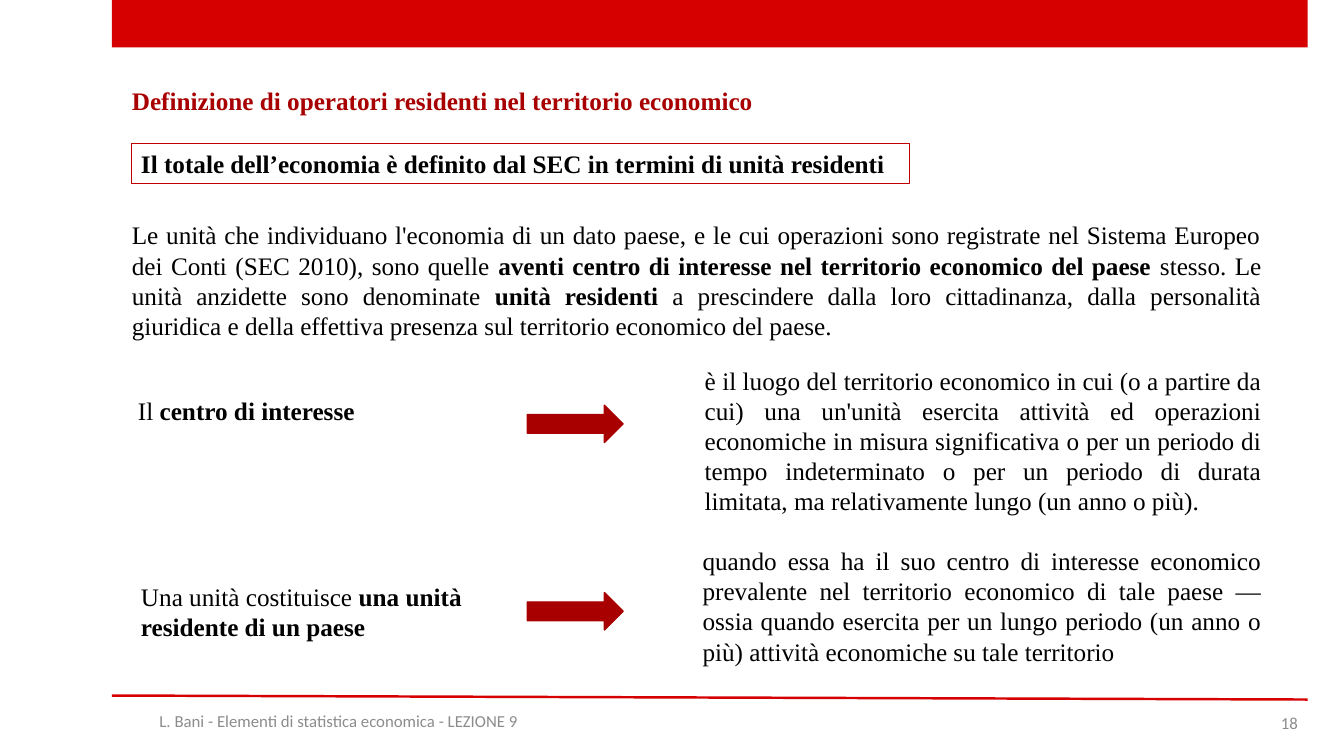
from dataclasses import dataclass

from pptx import Presentation
from pptx.dml.color import RGBColor
from pptx.enum.shapes import MSO_CONNECTOR, MSO_SHAPE
from pptx.enum.text import MSO_ANCHOR, PP_ALIGN
from pptx.util import Inches, Pt
from lxml import etree

RECT, ARROW = MSO_SHAPE.RECTANGLE, MSO_SHAPE.RIGHT_ARROW
LINE = MSO_CONNECTOR.STRAIGHT
LEFT, CENTER, RIGHT, JUSTIFY = (PP_ALIGN.LEFT, PP_ALIGN.CENTER,
                                PP_ALIGN.RIGHT, PP_ALIGN.JUSTIFY)
TOP, MIDDLE = MSO_ANCHOR.TOP, MSO_ANCHOR.MIDDLE
A_NS = "http://schemas.openxmlformats.org/drawingml/2006/main"


@dataclass(frozen=True)
class Theme:
    band: RGBColor = RGBColor(0xD6, 0x00, 0x00)
    accent: RGBColor = RGBColor(0xA8, 0x00, 0x00)
    frame: RGBColor = RGBColor(0xC0, 0x00, 0x00)
    ink: RGBColor = RGBColor(0x00, 0x00, 0x00)
    muted: RGBColor = RGBColor(0x8C, 0x8C, 0x8C)
    body_font: str = "Times New Roman"
    footer_font: str = "Calibri"
    body_size: int = 18
    footer_size: int = 12


THEME = Theme()


def write(tf, parts, align=LEFT, color=THEME.ink, font=THEME.body_font,
          size=THEME.body_size, anchor=TOP, wrap=True):
    """Fill a text frame with (text, bold) parts."""
    tf.word_wrap = wrap
    tf.vertical_anchor = anchor
    p = tf.paragraphs[0]
    p.alignment = align
    for text, bold in parts:
        r = p.add_run()
        r.text = text
        r.font.name, r.font.size, r.font.bold = font, Pt(size), bold
        r.font.color.rgb = color


def add_text(s, box, parts, **style):
    tb = s.shapes.add_textbox(*map(Inches, box))
    write(tb.text_frame, parts, **style)


def add_shape(s, kind, box, fill=None, line=None, width=1):
    sp = s.shapes.add_shape(kind, *map(Inches, box))
    sp.shadow.inherit = False
    if fill is None:
        sp.fill.background()
    else:
        sp.fill.solid()
        sp.fill.fore_color.rgb = fill
    if line is None:
        sp.line.fill.background()
    else:
        sp.line.color.rgb = line
        sp.line.width = Pt(width)
    return sp


def add_header(s, x, y, w):
    # Top band
    add_shape(s, RECT, (x, y, w, 0.47), fill=THEME.band)
    # Title and framed statement
    add_text(s, (x + 0.1, y + 0.8, 9.15, 0.4),
             [("Definizione di operatori residenti nel territorio economico", True)],
             color=THEME.accent)
    sp = add_shape(s, RECT, (x + 0.19, y + 1.42, 7.72, 0.4),
                   line=THEME.frame, width=0.75)
    write(sp.text_frame, [("Il totale dell’economia è definito dal SEC "
                           "in termini di unità residenti", True)])


def add_definition(s, x, y, w, h, term, meaning, term_box, meaning_x, arrow_y,
                   wrap=True):
    """Term, arrow and meaning; the offsets are relative to the row."""
    dx, dy, term_w, term_h = term_box
    add_text(s, (x + dx, y + dy, term_w, term_h), term, wrap=wrap)
    add_shape(s, ARROW, (x + 4.02, y + arrow_y, 0.95, 0.37),
              fill=THEME.accent, line=THEME.accent)
    add_text(s, (x + meaning_x, y, w - meaning_x, h), [(meaning, False)],
             align=JUSTIFY)


def add_body(s, x, y, w):
    # Introductory paragraph
    add_text(s, (x, y, w, 1.31), [
        ("Le unità che individuano l'economia di un dato paese, e le cui "
         "operazioni sono registrate nel Sistema Europeo dei Conti (SEC 2010), "
         "sono quelle ", False),
        ("aventi centro di interesse nel territorio economico del paese ", True),
        ("stesso. Le unità anzidette sono denominate ", False),
        ("unità residenti ", True),
        ("a prescindere dalla loro cittadinanza, dalla personalità giuridica e "
         "della effettiva presenza sul territorio economico del paese.", False),
    ], align=JUSTIFY)
    # Two definitions
    add_definition(
        s, x, y + 1.44, w, 1.62,
        [("Il ", False), ("centro di interesse", True)],
        "è il luogo del territorio economico in cui (o a partire da cui) una "
        "un'unità esercita attività ed operazioni economiche in misura "
        "significativa o per un periodo di tempo indeterminato o per un periodo "
        "di durata limitata, ma relativamente lungo (un anno o più).",
        term_box=(0.06, 0.3, 2.44, 0.4), meaning_x=5.68, arrow_y=0.45, wrap=False)
    add_definition(
        s, x, y + 3.23, w, 1.31,
        [("Una unità costituisce ", False),
         ("una unità residente di un paese", True)],
        "quando essa ha il suo centro di interesse economico prevalente nel "
        "territorio economico di tale paese — ossia quando esercita per un lungo "
        "periodo (un anno o più) attività economiche su tale territorio",
        term_box=(0.09, 0.36, 3.41, 0.71), meaning_x=5.66, arrow_y=0.52)


def add_footer(s, x, y, w):
    # Slightly sloping rule
    rule = s.shapes.add_connector(LINE, Inches(x), Inches(y),
                                  Inches(x + w), Inches(y + 0.04))
    rule.line.color.rgb = THEME.band
    rule.line.width = Pt(1.75)
    etree.SubElement(rule._element.spPr, f"{{{A_NS}}}effectLst")
    # Course name and page number
    style = dict(color=THEME.muted, font=THEME.footer_font,
                 size=THEME.footer_size, anchor=MIDDLE)
    add_text(s, (x, y + 0.05, 4.5, 0.4),
             [("L. Bani - Elementi di statistica economica - LEZIONE 9", False)],
             align=CENTER, **style)
    add_text(s, (x + w - 3, y + 0.07, 3, 0.4), [("18", False)],
             align=RIGHT, **style)


def main():
    prs = Presentation()
    prs.slide_width, prs.slide_height = Inches(13.33), Inches(7.5)
    s = prs.slides.add_slide(prs.slide_layouts[6])
    add_header(s, 1.11, 0, 11.86)
    add_body(s, 1.21, 2.13, 11.4)
    add_footer(s, 1.11, 6.9, 11.86)
    prs.save("out.pptx")


if __name__ == "__main__":
    main()
